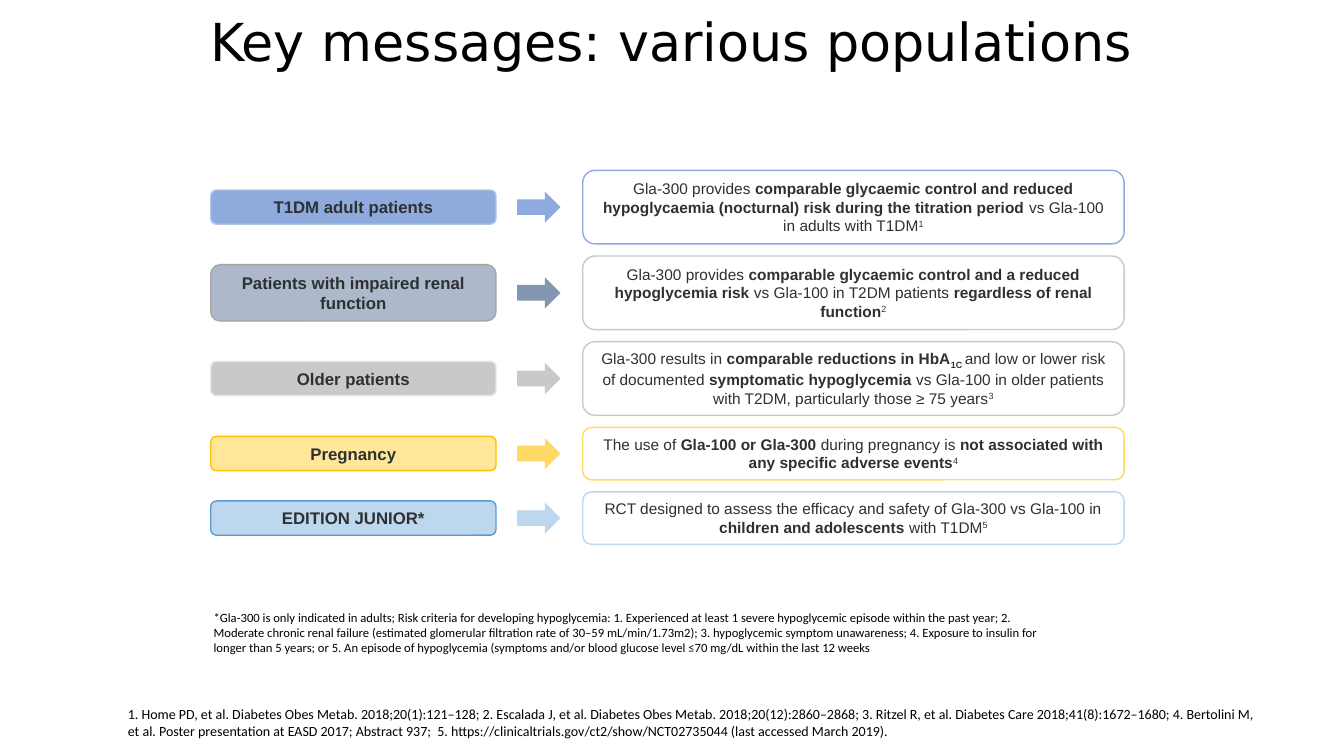
from dataclasses import dataclass

from pptx import Presentation
from pptx.dml.color import RGBColor
from pptx.enum.shapes import MSO_SHAPE
from pptx.enum.text import MSO_ANCHOR, PP_ALIGN
from pptx.util import Inches, Pt


@dataclass(frozen=True)
class Theme:
    title_font: str = "DejaVu Sans"
    card_font: str = "Arial"
    note_font: str = "Calibri"
    title_size: float = 37.4
    label_size: float = 12
    card_size: float = 11
    footnote_size: float = 9
    reference_size: float = 10
    black: str = "000000"
    ink: str = "2D3034"
    white: str = "FFFFFF"


THEME = Theme()

# Column positions and row rhythm, in inches
LABEL_X, LABEL_W = 2.09, 2.83
ARROW_X, ARROW_W, ARROW_H = 5.13, 0.43, 0.31
CARD_X, CARD_W = 5.78, 5.37
FIRST_TOP, ROW_GAP = 1.69, 0.12
CARD_HEIGHTS = {2: 0.52, 3: 0.73}
LABEL_HEIGHTS = {1: 0.34, 2: 0.56}

BASELINES = {"sup": "30000", "sub": "-25000"}

# label, label lines, card lines, (label fill, label line, arrow, card line), card runs
POPULATIONS = [
    ("T1DM adult patients", 1, 3, ("8FAADC", "B4C7E7", "8FAADC", "8FAADC"), [
        ("Gla-300 provides ", ""),
        ("comparable glycaemic control and reduced hypoglycaemia (nocturnal) "
         "risk during the titration period ", "bold"),
        ("vs Gla-100 in adults with T1DM", ""),
        ("1", "sup")]),
    ("Patients with impaired renal function", 2, 3,
     ("ADB9CA", "A5A5A5", "8497B0", "C9C9C9"), [
        ("Gla-300 provides ", ""),
        ("comparable glycaemic control and a reduced hypoglycemia risk ", "bold"),
        ("vs Gla-100 in T2DM patients ", ""),
        ("regardless of renal function", "bold"),
        ("2", "sup")]),
    ("Older patients", 1, 3, ("C9C9C9", "E7E6E6", "C9C9C9", "C9C9C9"), [
        ("Gla-300 results in ", ""),
        ("comparable reductions in HbA", "bold"),
        ("1C ", "bold sub"),
        ("and low or lower risk of documented ", ""),
        ("symptomatic hypoglycemia ", "bold"),
        ("vs Gla-100 in older patients with T2DM, particularly those ≥ 75 years", ""),
        ("3", "sup")]),
    ("Pregnancy", 1, 2, ("FFE699", "FFC000", "FFD966", "FFD966"), [
        ("The use of ", ""),
        ("Gla-100 or Gla-300", "bold"),
        (" during pregnancy is ", ""),
        ("not associated with any specific adverse events", "bold"),
        ("4", "sup")]),
    ("EDITION JUNIOR*", 1, 2, ("BDD7EE", "5B9BD5", "BDD7EE", "BDD7EE"), [
        ("RCT designed to assess the efficacy and safety of Gla-300 vs Gla-100 in ", ""),
        ("children and adolescents ", "bold"),
        ("with T1DM", ""),
        ("5", "sup")]),
]

FOOTNOTE = (
    "*Gla-300 is only indicated in adults; Risk criteria for developing hypoglycemia: "
    "1. Experienced at least 1 severe hypoglycemic episode within the past year; "
    "2. Moderate chronic renal failure (estimated glomerular filtration rate of "
    "30–59 mL/min/1.73m2); 3. hypoglycemic symptom unawareness; 4. Exposure to insulin "
    "for longer than 5 years; or 5. An episode of hypoglycemia (symptoms and/or blood "
    "glucose level ≤70 mg/dL within the last 12 weeks")
REFERENCES = (
    "1. Home PD, et al. Diabetes Obes Metab. 2018;20(1):121–128; "
    "2. Escalada J, et al. Diabetes Obes Metab. 2018;20(12):2860–2868; "
    "3. Ritzel R, et al. Diabetes Care 2018;41(8):1672–1680; "
    "4. Bertolini M, et al. Poster presentation at EASD 2017; Abstract 937;  "
    "5. https://clinicaltrials.gov/ct2/show/NCT02735044 (last accessed March 2019).")


def rgb(value):
    return RGBColor.from_string(value)


def box(x, y, w, h):
    return [Inches(v) for v in (x, y, w, h)]


def write(tf, runs, font, size, color, align, anchor):
    """Fill a text frame with one paragraph of (text, style) runs."""
    tf.word_wrap = True
    tf.vertical_anchor = anchor
    p = tf.paragraphs[0]
    p.alignment = align
    p.font.name, p.font.size = font, Pt(size)
    p.font.color.rgb = rgb(color)
    for text, style in runs:
        r = p.add_run()
        r.text = text
        for word in style.split():
            if word == "bold":
                r.font.bold = True
            else:
                r._r.get_or_add_rPr().set("baseline", BASELINES[word])
    return p


def add_title(s, text):
    sp = s.shapes.title
    sp.left, sp.top, sp.width, sp.height = box(1.94, 0.14, 9.45, 0.64)
    p = write(sp.text_frame, [(text, "")], THEME.title_font, THEME.title_size,
              THEME.black, PP_ALIGN.CENTER, MSO_ANCHOR.MIDDLE)
    p.line_spacing = 0.8


def add_note(s, text, place, size):
    sp = s.shapes.add_textbox(*place)
    write(sp.text_frame, [(text, "")], THEME.note_font, size, THEME.black,
          PP_ALIGN.LEFT, MSO_ANCHOR.TOP)


def add_block(s, preset, place, fill, line=None):
    sp = s.shapes.add_shape(preset, *place)
    sp.shadow.inherit = False
    sp.fill.solid()
    sp.fill.fore_color.rgb = rgb(fill)
    if line:
        sp.line.color.rgb = rgb(line)
        sp.line.width = Pt(1)
    else:
        sp.line.fill.background()
    return sp


def add_panel(s, place, fill, line, runs, size):
    sp = add_block(s, MSO_SHAPE.ROUNDED_RECTANGLE, place, fill, line)
    write(sp.text_frame, runs, THEME.card_font, size, THEME.ink,
          PP_ALIGN.CENTER, MSO_ANCHOR.MIDDLE)


def add_population(s, top, height, label, label_height, colors, message):
    """Label, arrow and message card, centred on one row."""
    label_fill, label_line, arrow_fill, card_line = colors
    middle = top + height / 2
    add_panel(s, box(LABEL_X, middle - label_height / 2, LABEL_W, label_height),
              label_fill, label_line, [(label, "bold")], THEME.label_size)
    add_block(s, MSO_SHAPE.RIGHT_ARROW,
              box(ARROW_X, middle - ARROW_H / 2, ARROW_W, ARROW_H), arrow_fill)
    add_panel(s, box(CARD_X, top, CARD_W, height),
              THEME.white, card_line, message, THEME.card_size)


def main():
    prs = Presentation()
    prs.slide_width, prs.slide_height = Inches(13.33), Inches(7.5)
    s = prs.slides.add_slide(prs.slide_layouts[5])

    add_title(s, "Key messages: various populations")

    # One row per population
    top = FIRST_TOP
    for label, label_lines, card_lines, colors, message in POPULATIONS:
        height = CARD_HEIGHTS[card_lines]
        add_population(s, top, height, label, LABEL_HEIGHTS[label_lines],
                       colors, message)
        top += height + ROW_GAP

    # Footnote and references
    add_note(s, FOOTNOTE, box(2.02, 6, 8.49, 0.64), THEME.footnote_size)
    add_note(s, REFERENCES, box(1.17, 6.95, 11.39, 0.41), THEME.reference_size)

    prs.save("out.pptx")


if __name__ == "__main__":
    main()
